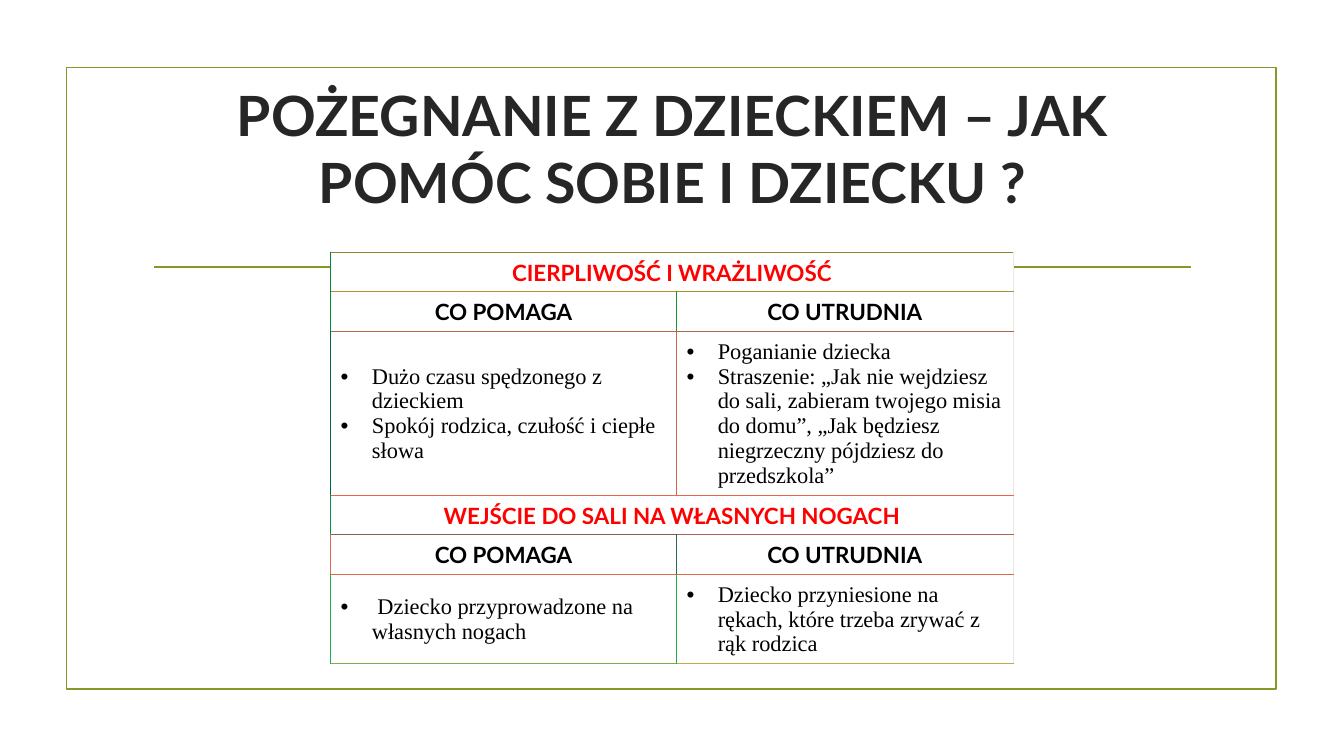
import pptx
import pptx.dml.color
import pptx.enum.shapes
import pptx.enum.text
import pptx.oxml
import pptx.oxml.ns
import pptx.util
from lxml import etree

WIDTH, HEIGHT = 13.33, 7.5
GREEN, RED, DARK, BLACK, WHITE = "83992A", "FF0000", "262626", "000000", "FFFFFF"
HEADING_FONT, BODY_FONT = "Lato", "Times New Roman"

# left, top, width, height in hundredths of the slide's width and height
FRAME = (4.95, 8.93, 90.02, 82.27)
RULE = (11.48, 35.33, 77.12, 0)
TITLE = (10.65, 14.27, 78.77, 19.07)
TABLE = (24.6, 33.33, 50.79, 54.13)

TITLE_TEXT = "POŻEGNANIE Z DZIECKIEM – JAK POMÓC SOBIE I DZIECKU ?"
HEADS = [["CO POMAGA"], ["CO UTRUDNIA"]]
ROWS = [
    [["CIERPLIWOŚĆ I WRAŻLIWOŚĆ"]],
    HEADS,
    [["Dużo czasu spędzonego z dzieckiem",
      "Spokój rodzica, czułość i ciepłe słowa"],
     ["Poganianie dziecka",
      "Straszenie: „Jak nie wejdziesz do sali, zabieram twojego misia do domu”, "
      "„Jak będziesz niegrzeczny pójdziesz do przedszkola”"]],
    [["WEJŚCIE DO SALI NA WŁASNYCH NOGACH"]],
    HEADS,
    [[" Dziecko przyprowadzone na własnych nogach"],
     ["Dziecko przyniesione na rękach, które trzeba zrywać z rąk rodzica"]],
]
ROW_SHARES = [0.39, 0.39, 1.62, 0.39, 0.39, 0.88]
COLUMN_SHARES = [3.43, 3.34]

# One list per vertical edge (by row) and per column of horizontal edges
RIGHT_EDGE = "E9E9E9"
VERTICAL_EDGES = [
    ["088430", "008F30", "00664E", "08914E", "E0674E", "20AC4E"],
    [RIGHT_EDGE, "189230", "D0654E", RIGHT_EDGE, "28684E", "20AC4E"],
    [RIGHT_EDGE] * len(ROWS),
]
HORIZONTAL_EDGES = [
    ["908330", "B88E30", "B8654E", "E8654E", "78664E", "E0674E", "80AC4E"],
    ["908330", "A89230", "A8664E", "E8654E", "A8664E", "E0674E", "C0AB4E"],
]


def color(value):
    return pptx.dml.color.RGBColor.from_string(value)


def place(box):
    """Turn a box in hundredths of the slide into lengths."""
    sides = (WIDTH, HEIGHT, WIDTH, HEIGHT)
    return [pptx.util.Inches(part * side / 100) for part, side in zip(box, sides)]


def add_span(para, text, size, font, ink, bold):
    span = para.add_run()
    span.text = text
    span.font.size = pptx.util.Pt(size)
    span.font.name = font
    span.font.bold = bold
    span.font.color.rgb = color(ink)


def draw_backdrop(page):
    frame = page.shapes.add_shape(
        pptx.enum.shapes.MSO_SHAPE.RECTANGLE, *place(FRAME))
    frame.shadow.inherit = False
    frame.fill.background()
    left, top, width, height = place(RULE)
    rule = page.shapes.add_connector(
        pptx.enum.shapes.MSO_CONNECTOR.STRAIGHT, left, top, left + width, top + height)
    etree.SubElement(rule._element.spPr, pptx.oxml.ns.qn("a:effectLst"))
    for outline in (frame.line, rule.line):
        outline.color.rgb = color(GREEN)
        outline.width = pptx.util.Pt(1.25)


def fill_title(page):
    title = page.shapes.title
    title.left, title.top, title.width, title.height = place(TITLE)
    text = title.text_frame
    text.word_wrap = True
    text.auto_size = pptx.enum.text.MSO_AUTO_SIZE.NONE
    text.vertical_anchor = pptx.enum.text.MSO_ANCHOR.MIDDLE
    text.margin_top = 0
    text.margin_bottom = pptx.util.Inches(0.64)
    para = text.paragraphs[0]
    para.alignment = pptx.enum.text.PP_ALIGN.CENTER
    add_span(para, TITLE_TEXT, 39.6, HEADING_FONT, DARK, True)


def add_borders(cell, row, column):
    edges = {
        "lnL": VERTICAL_EDGES[column][row],
        "lnR": VERTICAL_EDGES[column + 1][row],
        "lnT": HORIZONTAL_EDGES[column][row],
        "lnB": HORIZONTAL_EDGES[column][row + 1],
    }
    properties = cell._tc.get_or_add_tcPr()
    for tag, ink in edges.items():
        edge = etree.SubElement(
            properties, pptx.oxml.ns.qn("a:" + tag), w=str(pptx.util.Pt(0.6)))
        fill = etree.SubElement(edge, pptx.oxml.ns.qn("a:solidFill"))
        etree.SubElement(fill, pptx.oxml.ns.qn("a:srgbClr"), val=ink)


def add_bullet(para):
    properties = para._p.get_or_add_pPr()
    indent = pptx.util.Inches(0.31)
    properties.set("marL", str(indent))
    properties.set("indent", str(-indent))
    etree.SubElement(properties, pptx.oxml.ns.qn("a:buFont"), typeface="Arial")
    etree.SubElement(properties, pptx.oxml.ns.qn("a:buChar"), char="•")


def fill_cell(cell, lines, kind):
    for number, line in enumerate(lines):
        text = cell.text_frame
        para = text.add_paragraph() if number else text.paragraphs[0]
        if kind == "list":
            add_bullet(para)
            add_span(para, line, 16, BODY_FONT, BLACK, False)
        else:
            para.alignment = pptx.enum.text.PP_ALIGN.CENTER
            ink = RED if kind == "topic" else BLACK
            add_span(para, line, 16, HEADING_FONT, ink, True)


def draw_table(page):
    left, top, width, height = place(TABLE)
    table = page.shapes.add_table(
        len(ROWS), len(COLUMN_SHARES), left, top, width, height).table
    table.first_row = table.horz_banding = False
    for column, share in zip(table.columns, COLUMN_SHARES):
        column.width = int(width * share / sum(COLUMN_SHARES))
    for row, share in zip(table.rows, ROW_SHARES):
        row.height = int(height * share / sum(ROW_SHARES))
    for row, contents in enumerate(ROWS):
        kind = ("topic", "head", "list")[row % 3]
        for column in range(len(COLUMN_SHARES)):
            cell = table.cell(row, column)
            add_borders(cell, row, column)
            cell.fill.solid()
            cell.fill.fore_color.rgb = color(WHITE)
            cell.vertical_anchor = pptx.enum.text.MSO_ANCHOR.MIDDLE
            cell.margin_left = cell.margin_right = pptx.util.Inches(0.1)
            cell.margin_top = pptx.util.Inches(0.07)
            cell.margin_bottom = pptx.util.Inches(0.06)
        if kind == "topic":
            table.cell(row, 0).merge(table.cell(row, 1))
        for column, lines in enumerate(contents):
            fill_cell(table.cell(row, column), lines, kind)


def main():
    deck = pptx.Presentation()
    deck.slide_width = pptx.util.Inches(WIDTH)
    deck.slide_height = pptx.util.Inches(HEIGHT)
    page = deck.slides.add_slide(deck.slide_layouts.get_by_name("Title Only"))
    draw_backdrop(page)
    fill_title(page)
    draw_table(page)
    deck.save("out.pptx")


if __name__ == "__main__":
    main()
